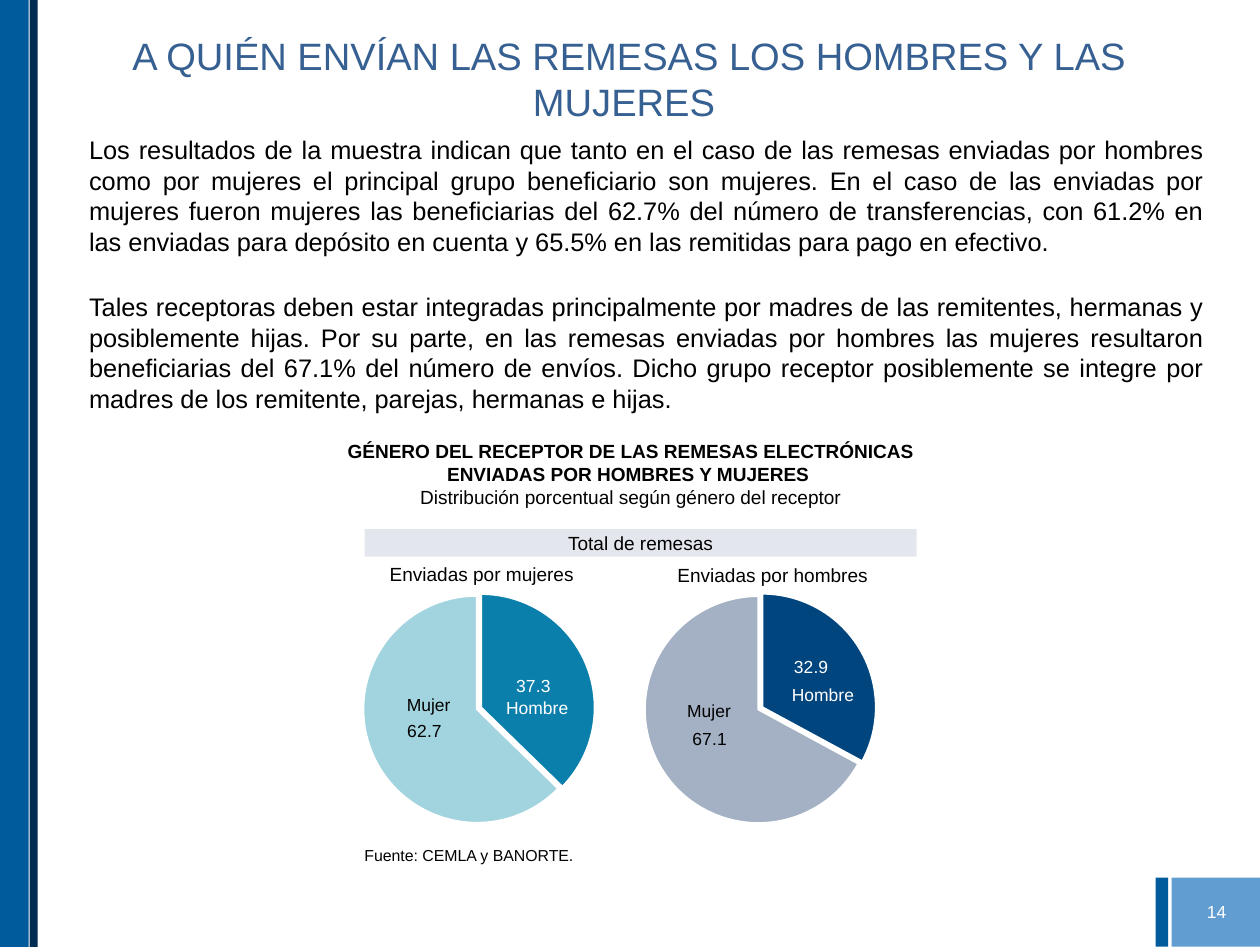
from pptx import Presentation
from pptx.chart.data import CategoryChartData
from pptx.dml.color import RGBColor
from pptx.enum import chart as ch, shapes as sh, text as tx
from pptx.oxml import parse_xml
from pptx.oxml.ns import nsdecls
from pptx.util import Pt

FONT = "Arial"
WIDE, HIGH = 793.7, 596.7
HUES = {
    "black": "000000", "white": "FFFFFF", "title": "376092",
    "blue": "005B9D", "navy": "012D55", "sky": "629DD1", "band": "E3E7ED",
    "teal": "0B7FAB", "aqua": "A2D4DF", "deep": "00457D", "gray": "A4B1C4",
}
ALIGN = {"c": tx.PP_ALIGN.CENTER, "l": tx.PP_ALIGN.LEFT, "j": tx.PP_ALIGN.JUSTIFY}

TITLE = "A QUIÉN ENVÍAN LAS REMESAS LOS HOMBRES Y LAS MUJERES "
BODY = [
    "Los resultados de la muestra indican que tanto en el caso de las remesas "
    "enviadas por hombres como por mujeres el principal grupo beneficiario son "
    "mujeres. En el caso de las enviadas por mujeres fueron mujeres las "
    "beneficiarias del 62.7% del número de transferencias, con 61.2% en las "
    "enviadas para depósito en cuenta y 65.5% en las remitidas para pago en efectivo. ",
    "Tales receptoras deben estar integradas principalmente por madres de las "
    "remitentes, hermanas y posiblemente hijas. Por su parte, en las remesas "
    "enviadas por hombres las mujeres resultaron beneficiarias del 67.1% del "
    "número de envíos. Dicho grupo receptor posiblemente se integre por madres "
    "de los remitente, parejas, hermanas e hijas. ",
]
HEAD = ["GÉNERO DEL RECEPTOR DE LAS REMESAS ELECTRÓNICAS ENVIADAS POR HOMBRES Y MUJERES ",
        "Distribución porcentual según género del receptor"]


def paint(name):
    return RGBColor.from_string(HUES[name])


def style(font, size, hue, bold=False):
    font.name, font.size, font.bold = FONT, Pt(size), bold
    font.color.rgb = paint(hue)


def write(frame, lines, size=12, hue="black", align="c", mid=True, gap=0, bold=()):
    frame.word_wrap = True
    frame.vertical_anchor = tx.MSO_ANCHOR.MIDDLE if mid else tx.MSO_ANCHOR.TOP
    for i, line in enumerate(lines):
        para = frame.add_paragraph() if i else frame.paragraphs[0]
        para.alignment = ALIGN[align]
        if i and gap:
            para.space_before = Pt(gap)
        run = para.add_run()
        run.text = line
        style(run.font, size, hue, i in bold)


def label(slide, box, *lines, **form):
    area = slide.shapes.add_textbox(*map(Pt, box))
    write(area.text_frame, lines, **form)


def block(slide, box, hue):
    rect = slide.shapes.add_shape(sh.MSO_SHAPE.RECTANGLE, *map(Pt, box))
    rect.shadow.inherit = False
    rect.fill.solid()
    rect.fill.fore_color.rgb = paint(hue)
    rect.line.fill.background()
    return rect


def layout(**vals):
    spot = "".join(f'<c:{k} val="{v}"/>' for k, v in vals.items())
    return parse_xml(f'<c:layout {nsdecls("c")}><c:manualLayout>{spot}'
                     "</c:manualLayout></c:layout>")


def pie(slide, left, vals, hues, lift):
    data = CategoryChartData()
    data.categories = ["1", "2"]
    data.add_series("Series 1", vals)
    box = map(Pt, (left, 357.1, 234.7, 172.1))
    chart = slide.shapes.add_chart(ch.XL_CHART_TYPE.PIE, *box, data).chart
    chart.has_legend = chart.has_title = False
    style(chart.font, 10, "black")
    plot = chart.plots[0]
    plot.vary_by_categories = False
    series = plot.series[0]
    for i, hue in enumerate(hues):
        form = series.points[i].format
        form.fill.solid()
        form.fill.fore_color.rgb = paint(hue)
        form.line.color.rgb = paint("white")
        form.line.width = Pt(1.25)
    tags = series.data_labels
    tags.show_value = True
    tags.position = ch.XL_LABEL_POSITION.CENTER
    style(tags.font, 11, "black")
    first = series.points[0].data_label
    style(first.font, 11, "white")
    first.position = ch.XL_LABEL_POSITION.CENTER
    if lift:
        tag = series._element.find(".//{*}dLbl")
        tag.find("{*}idx").addnext(layout(x=0, y=lift))
    burst = parse_xml(f'<c:explosion {nsdecls("c")} val="2"/>')
    series._element.find("{*}dPt").addprevious(burst)
    area = chart._chartSpace.chart.plotArea
    for old in area.findall("{*}layout"):
        area.remove(old)
    area.insert(0, layout(layoutTarget="inner", xMode="edge", yMode="edge",
                          x=0.202, y=0.059, w=0.622, h=0.92))


def frame(slide):
    block(slide, (738, 553, 55.7, 43.4), "sky")
    block(slide, (727.9, 553, 7.9, 43.4), "blue")
    block(slide, (18.7, 0, 5, HIGH), "navy")
    block(slide, (0, 0, 18, HIGH), "blue")
    label(slide, (742.3, 558.7, 48.2, 31.7), "14", size=11, hue="white")


def main():
    deck = Presentation()
    deck.slide_width, deck.slide_height = Pt(WIDE), Pt(HIGH)
    slide = deck.slides.add_slide(deck.slide_layouts[6])
    frame(slide)
    label(slide, (49, 16.2, 694.8, 66.2), TITLE, size=24, hue="title")
    label(slide, (49, 81.2, 716.4, 201.6), *BODY, size=16, align="j", mid=False, gap=22.1)
    label(slide, (191.5, 264.2, 411.8, 69.1), *HEAD, bold=(0,))
    label(slide, (222.5, 528.5, 272.2, 20.9), "Fuente: CEMLA y BANORTE.", size=10, align="l")
    pies = [
        (181.4, (37.3, 62.7), ("teal", "aqua"), 0, "Enviadas por mujeres",
         (226.8, 350.6, 153.4, 22.3), (245.5, 430.6, 49, 26.6), (298.1, 434.9, 80.6, 21.6)),
        (358.6, (32.9, 67.1), ("deep", "gray"), -0.04, "Enviadas por hombres",
         (409, 350.6, 155.5, 23), (422.6, 434.2, 48.2, 27.4), (478.1, 427, 80.6, 21.6)),
    ]
    for left, vals, hues, lift, name, top, her, him in pies:
        pie(slide, left, vals, hues, lift)
        label(slide, top, name)
        label(slide, her, "Mujer", size=11)
        label(slide, him, "Hombre", size=11, hue="white")
    band = block(slide, (229.7, 333.4, 347.8, 17.3), "band")
    write(band.text_frame, ["Total de remesas"])
    deck.save("out.pptx")


if __name__ == "__main__":
    main()
